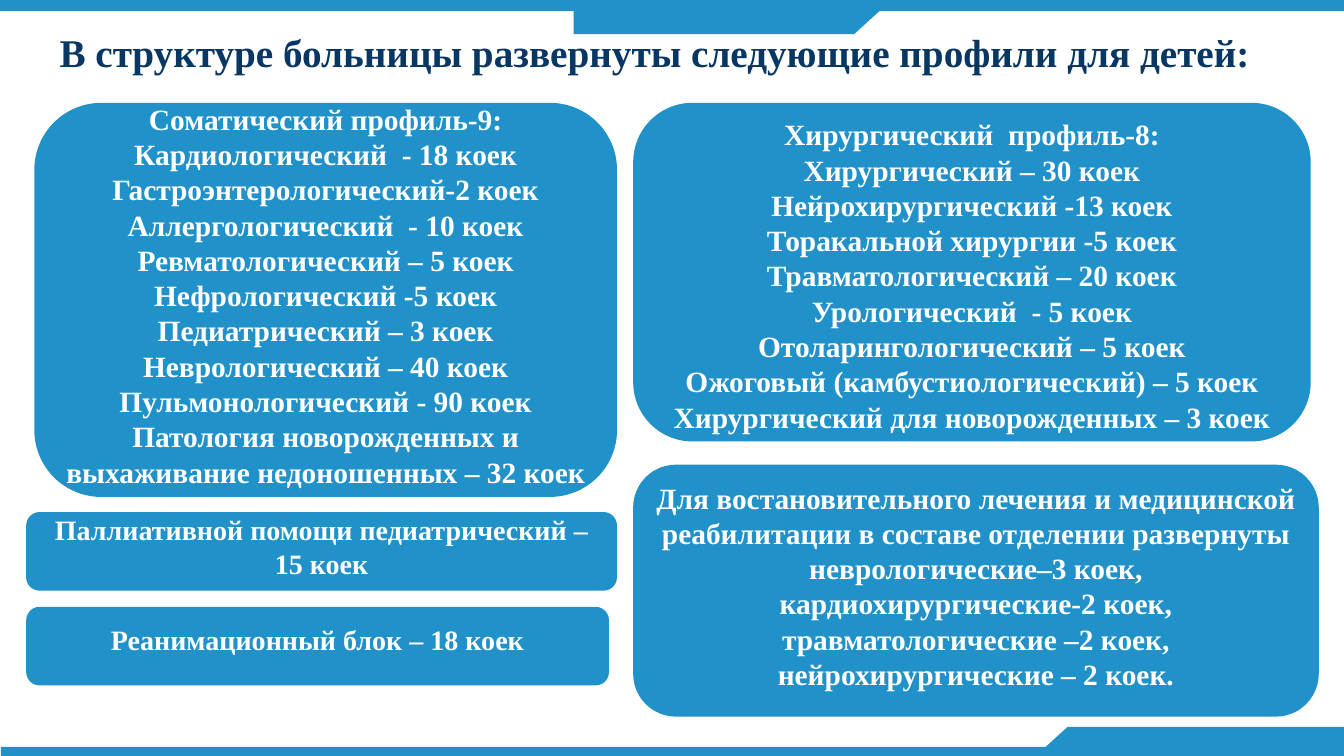
"""Build the slide on the bed profiles of a children's hospital."""
from dataclasses import dataclass

from pptx import Presentation
from pptx.dml.color import RGBColor
from pptx.enum.shapes import MSO_SHAPE
from pptx.enum.text import MSO_ANCHOR, PP_ALIGN
from pptx.util import Inches, Pt

RECT = MSO_SHAPE.RECTANGLE
ROUND = MSO_SHAPE.ROUNDED_RECTANGLE
MERGE = MSO_SHAPE.FLOWCHART_MERGE
MIDDLE = MSO_ANCHOR.MIDDLE
CENTER = PP_ALIGN.CENTER
LEFT = PP_ALIGN.LEFT


@dataclass(frozen=True)
class Theme:
    """Hold the colours, font and type sizes."""
    blue: RGBColor = RGBColor(0x21, 0x91, 0xC9)
    navy: RGBColor = RGBColor(0x08, 0x37, 0x63)
    white: RGBColor = RGBColor(0xFF, 0xFF, 0xFF)
    font: str = "Times New Roman"
    title: int = 28
    large: int = 21
    small: int = 20


THEME = Theme()
WIDTH, HEIGHT = 13.33, 7.5
TITLE = "В структуре больницы развернуты следующие профили для детей:"

SOMATIC = [
    "Соматический профиль-9: Кардиологический  - 18 коек",
    "Гастроэнтерологический-2 коек",
    "Аллергологический  - 10 коек",
    "Ревматологический – 5 коек",
    "Нефрологический -5 коек",
    "Педиатрический – 3 коек",
    "Неврологический – 40 коек",
    "Пульмонологический - 90 коек",
    "Патология новорожденных и выхаживание недоношенных – 32 коек",
]
SURGICAL = [
    "Хирургический  профиль-8:",
    "Хирургический – 30 коек",
    "Нейрохирургический -13 коек",
    "Торакальной хирургии -5 коек",
    "Травматологический – 20 коек",
    "Урологический  - 5 коек",
    "Отоларингологический – 5 коек",
    "Ожоговый (камбустиологический) – 5 коек",
    "Хирургический для новорожденных – 3 коек",
]
CARE = ["Паллиативной помощи педиатрический –", "15 коек"]
URGENT = ["Реанимационный блок – 18 коек"]
REHAB = [
    "Для востановительного лечения и медицинской реабилитации "
    "в составе отделении развернуты неврологические–3 коек,",
    "кардиохирургические-2 коек,",
    "травматологические –2 коек,",
    "нейрохирургические – 2 коек.",
]

CARDS = [
    ((0.34, 1.02, 5.78, 3.91), SOMATIC, THEME.large, -0.05, 0.17),
    ((6.28, 1.02, 6.72, 3.36), SURGICAL, THEME.large, 0.03, 0.175),
    ((0.26, 5.08, 5.86, 0.78), CARE, THEME.small, -0.05, 0.17),
    ((0.26, 6.02, 5.78, 0.78), URGENT, THEME.small, -0.07, 0.17),
    ((6.28, 4.61, 6.8, 2.5), REHAB, THEME.large, -0.05, 0.17),
]


def style(par, size, color, align):
    """Format a paragraph and its runs."""
    par.alignment = align
    for run in par.runs:
        run.font.name = THEME.font
        run.font.size = Pt(size)
        run.font.bold = True
        run.font.color.rgb = color


def block(slide, kind, box):
    """Draw a plain blue shape in the box."""
    shape = slide.shapes.add_shape(kind, *map(Inches, box))
    shape.shadow.inherit = False
    shape.fill.solid()
    shape.fill.fore_color.rgb = THEME.blue
    shape.line.fill.background()
    return shape


def top_band(slide, box):
    """Draw the top bar with its hanging tab."""
    left, top, width, height = box
    block(slide, RECT, box)
    block(slide, RECT, (left + 5.69, top + 0.04, 2.78, 0.3))
    block(slide, MERGE, (left + 8.14, top + 0.04, 0.66, 0.3))


def base_band(slide, box):
    """Draw the bottom bar with its raised corner."""
    left, top, width, height = box
    block(slide, RECT, box)
    block(slide, RECT, (left + 10.58, top - 0.2, width - 10.58, 0.29))
    slope = block(slide, MERGE, (left + 10.25, top - 0.2, 0.66, 0.3))
    slope.rotation = 180


def heading(slide, box):
    """Place the title in the box."""
    title = slide.shapes.title
    title.left, title.top, title.width, title.height = map(Inches, box)
    frame = title.text_frame
    frame.text = TITLE
    frame.vertical_anchor = MIDDLE
    par = frame.paragraphs[0]
    par.line_spacing = 0.9
    style(par, THEME.title, THEME.navy, LEFT)


def card(slide, box, lines, size, shift, curve):
    """Draw a rounded card whose centred text is moved by the shift."""
    shape = block(slide, ROUND, box)
    shape.adjustments[0] = curve
    frame = shape.text_frame
    frame.word_wrap = True
    frame.vertical_anchor = MIDDLE
    frame.margin_top = Inches(max(0, 2 * shift))
    frame.margin_bottom = Inches(max(0, -2 * shift))
    frame.text = "\n".join(lines)
    for par in frame.paragraphs:
        style(par, size, THEME.white, CENTER)


def main():
    """Build and save the slide."""
    deck = Presentation()
    deck.slide_width, deck.slide_height = Inches(WIDTH), Inches(HEIGHT)
    slide = deck.slides.add_slide(deck.slide_layouts[5])
    top_band(slide, (0, 0, WIDTH, 0.11))
    base_band(slide, (0.01, 7.41, WIDTH - 0.01, 0.09))
    heading(slide, (0.49, 0.23, 12.5, 0.63))
    for box, lines, size, shift, curve in CARDS:
        card(slide, box, lines, size, shift, curve)
    deck.save("out.pptx")


if __name__ == "__main__":
    main()
